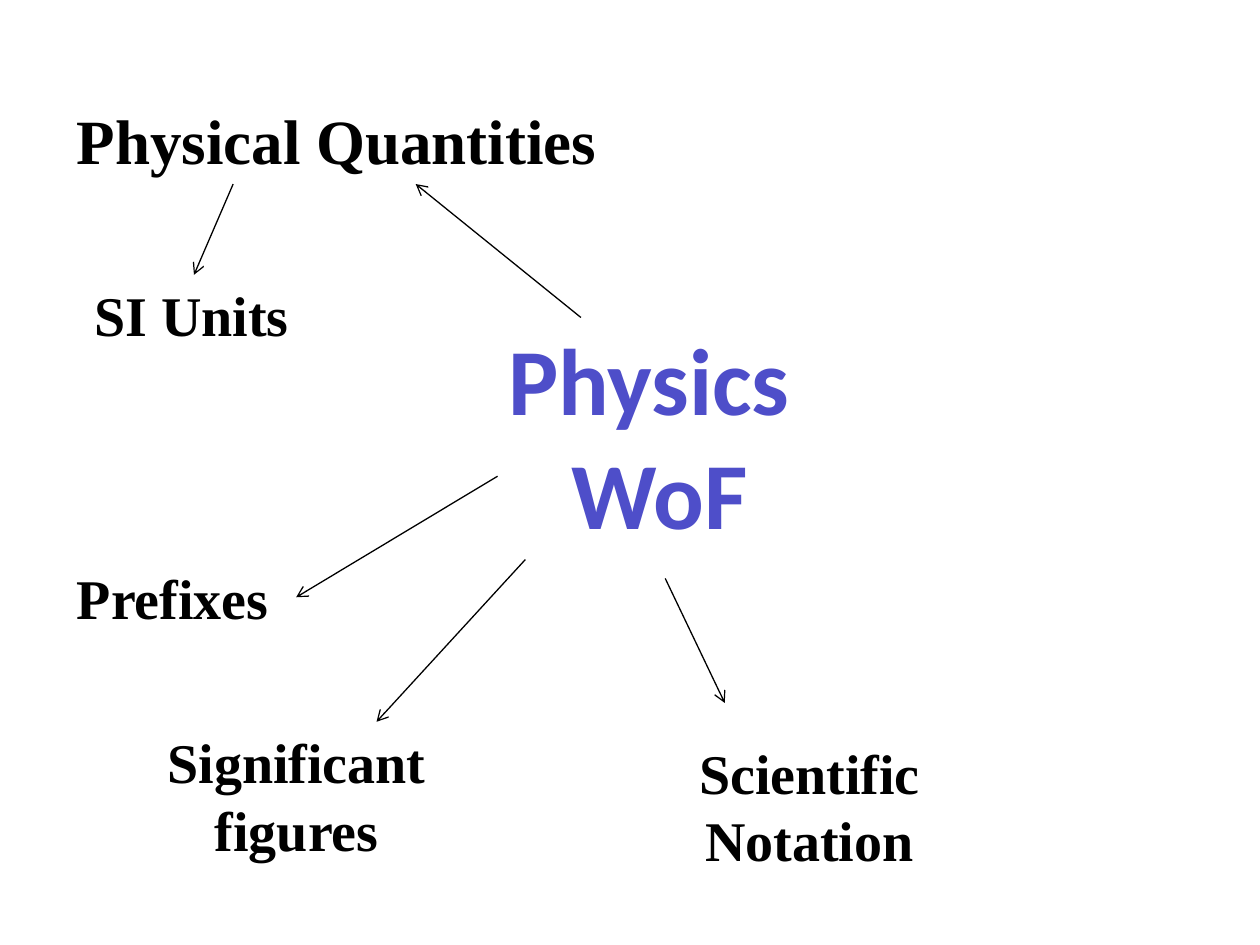
from lxml.etree import SubElement
from pptx import Presentation
from pptx.dml.color import RGBColor
from pptx.enum.shapes import MSO_CONNECTOR
from pptx.enum.text import MSO_AUTO_SIZE, PP_ALIGN
from pptx.oxml.ns import qn
from pptx.util import Cm, Pt

BLACK = RGBColor(0x00, 0x00, 0x00)
VIOLET = RGBColor(0x4E, 0x4E, 0xC9)

TOPIC = {"name": "Times New Roman", "size": Pt(32), "bold": True}
HEADING = {**TOPIC, "size": Pt(36)}
HUB = {"name": "Calibri", "size": Pt(54), "bold": True}

LABELS = [
    (["Physics ", "WoF"], (9.96, 6.35, 6.68, 4.88), HUB, VIOLET, PP_ALIGN.CENTER, False),
    (["Physical Quantities"], (1.3, 1.93, 11.1, 1.8), HEADING, BLACK, PP_ALIGN.LEFT, False),
    (["SI Units"], (1.65, 5.54, 4.47, 1.63), TOPIC, BLACK, PP_ALIGN.LEFT, False),
    (["Prefixes"], (1.3, 11.23, 4.42, 1.63), TOPIC, BLACK, PP_ALIGN.LEFT, False),
    (["Significant ", "figures "], (3.1, 14.55, 6.05, 3), TOPIC, BLACK, PP_ALIGN.CENTER, False),
    (["Scientific", "Notation"], (12.65, 14.76, 7.34, 3), TOPIC, BLACK, PP_ALIGN.CENTER, True),
]

ARROWS = [
    (11.71, 6.4, 8.38, 3.71),
    (4.7, 3.71, 3.91, 5.54),
    (10.03, 9.6, 5.97, 12.04),
    (10.59, 11.28, 7.59, 14.55),
    (13.41, 11.66, 14.61, 14.17),
]


def add_label(s, lines, box, font, color, align, wrap):
    """Add a text box with one paragraph per line."""
    tf = s.shapes.add_textbox(*map(Cm, box)).text_frame
    tf.word_wrap = wrap
    tf.auto_size = MSO_AUTO_SIZE.SHAPE_TO_FIT_TEXT
    for i, line in enumerate(lines):
        p = tf.add_paragraph() if i else tf.paragraphs[0]
        p.alignment = align
        r = p.add_run()
        r.text = line
        for key, value in font.items():
            setattr(r.font, key, value)
        r.font.color.rgb = color


def add_arrow(s, ends):
    """Add a thin straight line with an open arrowhead at its end."""
    sp = s.shapes.add_connector(MSO_CONNECTOR.STRAIGHT, *map(Cm, ends))
    sp.line.color.rgb = BLACK
    sp.line.width = Pt(0.75)
    SubElement(sp.line._get_or_add_ln(), qn("a:tailEnd"), type="arrow")
    SubElement(sp._element.spPr, qn("a:effectLst"))


def main():
    """Build the mind map slide and save it."""
    prs = Presentation()
    prs.slide_width, prs.slide_height = Cm(25.4), Cm(19.05)
    s = prs.slides.add_slide(prs.slide_layouts[6])
    for label in LABELS:
        add_label(s, *label)
    for ends in ARROWS:
        add_arrow(s, ends)
    prs.save("out.pptx")


if __name__ == "__main__":
    main()
